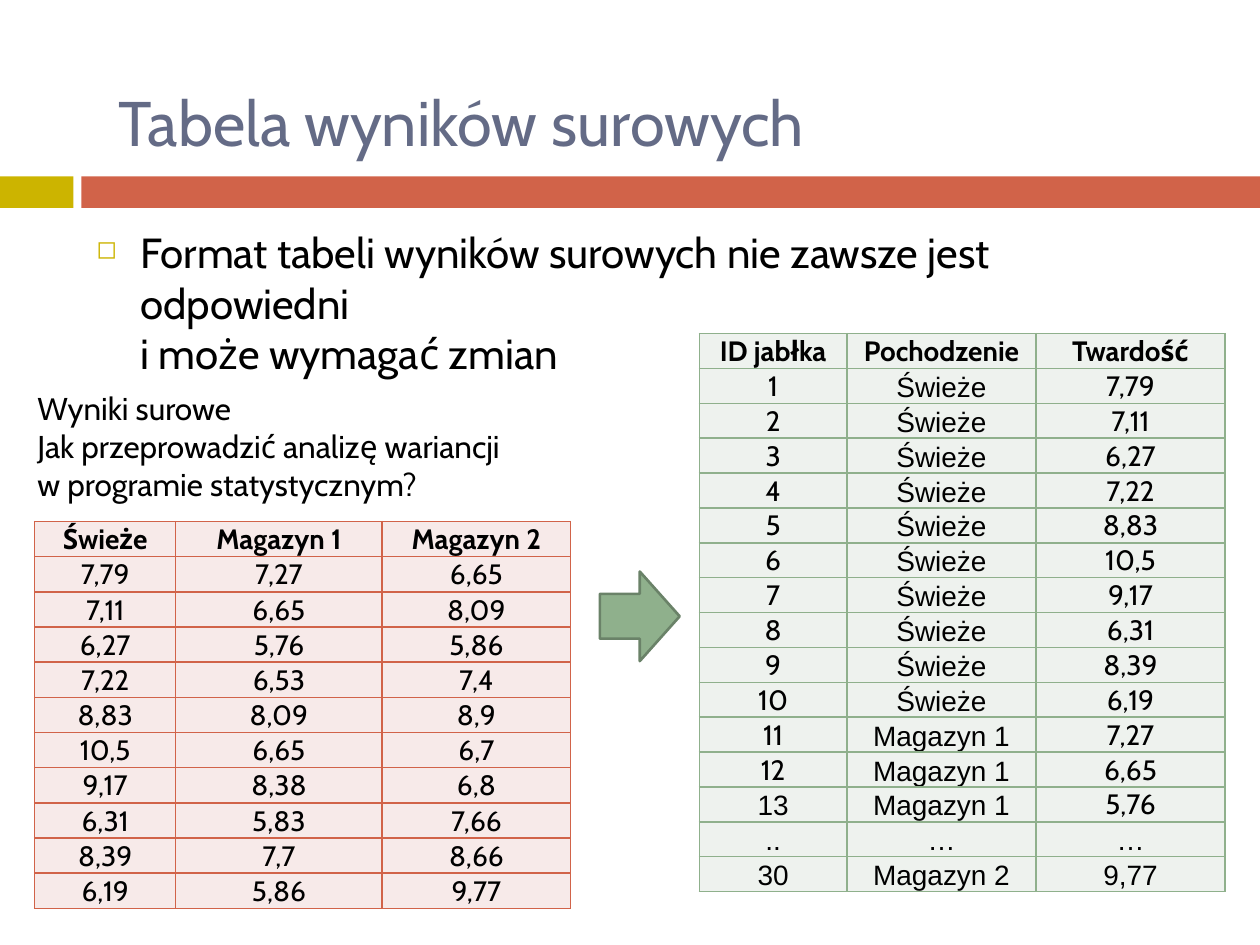
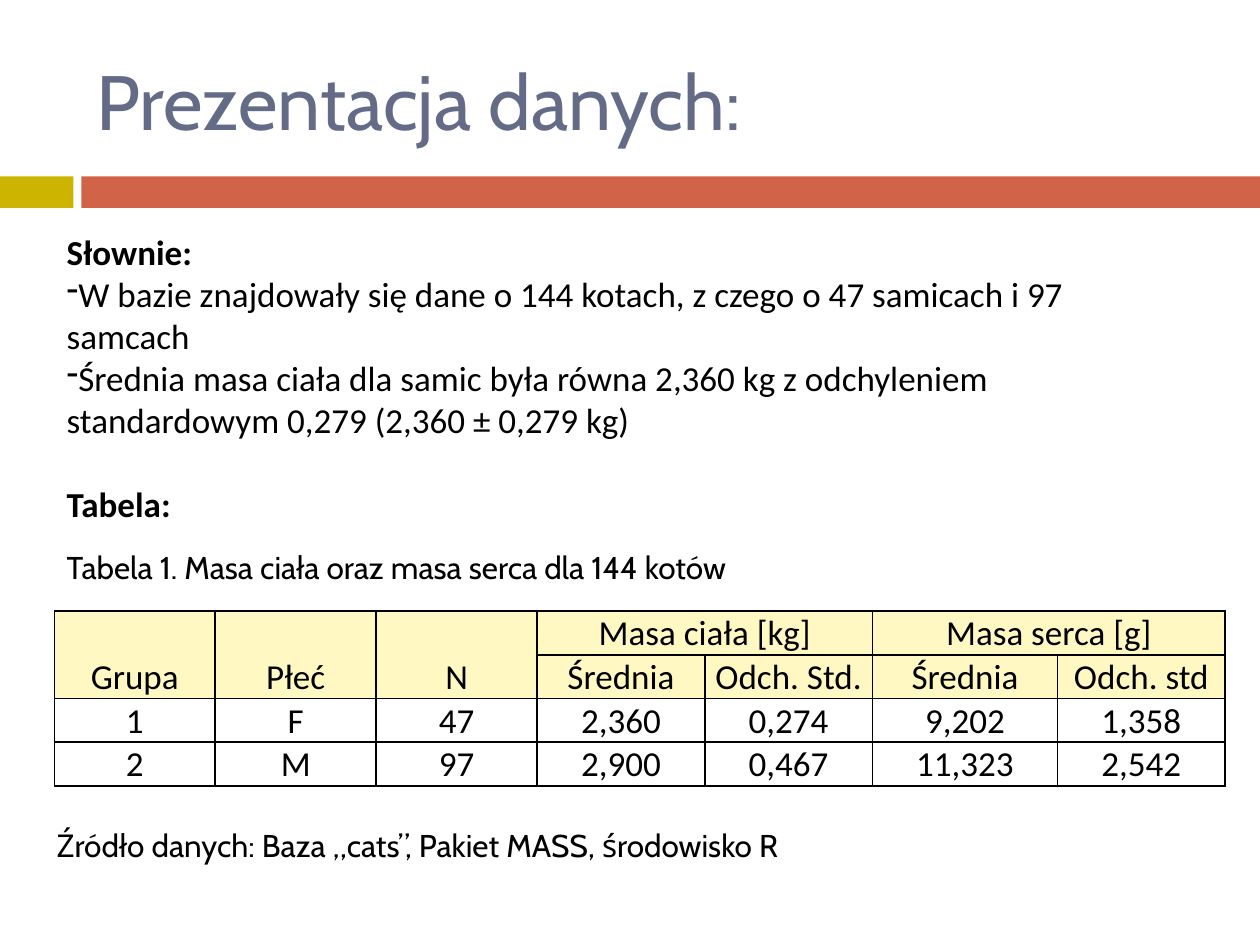
"""Builds two slides on raw result tables and on presenting data."""
from lxml.etree import SubElement as Sub
from pptx import Presentation
from pptx.dml.color import RGBColor as RGB
from pptx.enum.shapes import MSO_SHAPE as SHAPE
from pptx.enum.text import MSO_ANCHOR as ANCHOR, PP_ALIGN as ALIGN
from pptx.oxml.ns import qn
from pptx.util import Pt

COLORS = {
    "title": "646B86", "text": "000000", "gold": "CCB400", "red": "D16349",
    "green": "8FB08C", "dark_green": "6A8268", "pale_red": "F7EAE9",
    "pale_green": "EEF2EE", "pale_yellow": "FFF8C2",
}
C = {name: RGB.from_string(value) for name, value in COLORS.items()}


def add_text(s, box, lines, size, font="Cabin", color="text", anchor=ANCHOR.TOP):
    tf = s.shapes.add_textbox(*map(Pt, box)).text_frame
    tf.word_wrap = True
    tf.vertical_anchor = anchor
    for i, line in enumerate(lines):
        p = tf.paragraphs[0] if i == 0 else tf.add_paragraph()
        p.text = line
        for r in p.runs:
            r.font.size, r.font.name, r.font.color.rgb = Pt(size), font, C[color]
    return tf.paragraphs


def add_grid(s, left, top, widths, row_height, rows, size, font, border, fills):
    frame = s.shapes.add_table(len(rows), len(widths), Pt(left), Pt(top),
                               Pt(sum(widths)), Pt(row_height * len(rows)))
    tbl = frame.table
    tbl.first_row = tbl.horz_banding = False
    for col, width in zip(tbl.columns, widths):
        col.width = Pt(width)
    for i, row in enumerate(rows):
        for j, value in enumerate(row):
            cell = tbl.cell(i, j)
            cell.text = value
            cell.vertical_anchor = ANCHOR.BOTTOM
            cell.margin_left = cell.margin_right = cell.margin_top = Pt(0.7)
            cell.margin_bottom = 0
            p = cell.text_frame.paragraphs[0]
            p.alignment = ALIGN.CENTER
            for r in p.runs:
                r.font.size, r.font.name, r.font.color.rgb = Pt(size), font, C["text"]
                r.font.bold = False
            for side in ("lnL", "lnR", "lnT", "lnB"):
                ln = Sub(cell._tc.get_or_add_tcPr(), qn(f"a:{side}"), w=str(Pt(1)))
                Sub(Sub(ln, qn("a:solidFill")), qn("a:srgbClr"), val=COLORS[border])
            if fills[i]:
                cell.fill.solid()
                cell.fill.fore_color.rgb = C[fills[i]]
            else:
                cell.fill.background()
    return tbl


prs = Presentation()
prs.slide_width, prs.slide_height = Pt(720), Pt(540)

titles = [
    ("Tabela wyników surowych", (60.5, 30.25, 642, 78), 36),
    ("Prezentacja danych:", (48, 18, 642, 78), 44),
]
bands = [(0, 42, "gold"), (46.5, 673.5, "red")]
for title, box, size in titles:
    s = prs.slides.add_slide(prs.slide_layouts[6])
    for left, width, color in bands:
        sp = s.shapes.add_shape(SHAPE.RECTANGLE, Pt(left), Pt(100.8), Pt(width), Pt(18))
        sp.shadow.inherit = False
        sp.fill.solid()
        sp.fill.fore_color.rgb = C[color]
        sp.line.fill.background()
    add_text(s, box, [title], size, color="title", anchor=ANCHOR.MIDDLE)
raw_slide, report_slide = prs.slides

s = raw_slide
p = add_text(s, (48, 126, 642, 90), [
    "Format tabeli wyników surowych nie zawsze jest odpowiedni \vi może wymagać zmian"], 24)[0]
p.space_before = Pt(7)
pPr = p._p.get_or_add_pPr()
pPr.set("marL", str(Pt(25.2)))
pPr.set("indent", str(-Pt(25.2)))
Sub(Sub(pPr, qn("a:buClr")), qn("a:srgbClr"), val=COLORS["gold"])
Sub(pPr, qn("a:buSzPct"), val="60000")
Sub(pPr, qn("a:buChar"), char="◻")

add_text(s, (14.3, 219, 323, 73), [
    "Wyniki surowe", "Jak przeprowadzić analizę wariancji \vw programie statystycznym?"], 18)

origins = ["Świeże", "Magazyn 1", "Magazyn 2"]
hardness = [
    ["7,79", "7,27", "6,65"],
    ["7,11", "6,65", "8,09"],
    ["6,27", "5,76", "5,86"],
    ["7,22", "6,53", "7,4"],
    ["8,83", "8,09", "8,9"],
    ["10,5", "6,65", "6,7"],
    ["9,17", "8,38", "6,8"],
    ["6,31", "5,83", "7,66"],
    ["8,39", "7,7", "8,66"],
    ["6,19", "5,86", "9,77"],
]
wide_rows = [origins] + hardness
apples = [(origin, row[k]) for k, origin in enumerate(origins) for row in hardness]
long_rows = [["ID jabłka", "Pochodzenie", "Twardość"]]
long_rows += [[str(n), *apple] for n, apple in enumerate(apples[:13], 1)]
long_rows += [["..", "…", "…"], [str(len(apples)), *apples[-1]]]

wide = add_grid(s, 19.8, 298, [80.6, 118, 107.7], 20.1, wide_rows, 16, "Cabin",
                "red", ["pale_red"] * len(wide_rows))
long = add_grid(s, 399.6, 190.6, [84.4, 108, 108], 19.95, long_rows, 16, "Cabin",
                "green", ["pale_green"] * len(long_rows))
for tbl in (wide, long):
    for cell in tbl.rows[0].cells:
        cell.text_frame.paragraphs[0].runs[0].font.bold = True
for j, first_arial_row in enumerate([13, 1, 14]):
    for i in range(first_arial_row, len(long_rows)):
        long.cell(i, j).text_frame.paragraphs[0].runs[0].font.name = "Arial"

sp = s.shapes.add_shape(SHAPE.RIGHT_ARROW, Pt(342.8), Pt(326.6), Pt(45.6), Pt(51.2))
sp.shadow.inherit = False
sp.fill.solid()
sp.fill.fore_color.rgb = C["green"]
sp.line.color.rgb = C["dark_green"]
sp.line.width = Pt(1.5)

s = report_slide
cat_rows = [
    ["Grupa", "Płeć", "N", "Masa ciała [kg]", "", "Masa serca [g]", ""],
    ["", "", "", "Średnia", "Odch. Std.", "Średnia", "Odch. std"],
    ["1", "F", "47", "2,360", "0,274", "9,202", "1,358"],
    ["2", "M", "97", "2,900", "0,467", "11,323", "2,542"],
]
tbl = add_grid(s, 31, 349.2, [92, 92, 92, 95.8, 95.8, 105.8, 95.8], 25, cat_rows, 20,
               "Calibri", "text", ["pale_yellow", "pale_yellow", None, None])
for j in range(3):
    tbl.cell(0, j).merge(tbl.cell(1, j))
for j in (3, 5):
    tbl.cell(0, j).merge(tbl.cell(0, j + 1))

add_text(s, (31, 309.6, 567, 29), ["Tabela 1. Masa ciała oraz masa serca dla 144 kotów"], 18)
add_text(s, (25.2, 468.7, 567, 29), ["Źródło danych: Baza „cats”, Pakiet MASS, środowisko R"], 18)

ps = add_text(s, (31, 128.2, 652, 177), [
    "Słownie:",
    "W bazie znajdowały się dane o 144 kotach, z czego o 47 samicach i 97 samcach",
    "Średnia masa ciała dla samic była równa 2,360 kg z odchyleniem standardowym "
    "0,279 (2,360 ± 0,279 kg)",
    "Tabela:",
], 20, "Calibri")
for p in (ps[0], ps[3]):
    p.runs[0].font.bold = True
for p in ps[1:3]:
    Sub(p._p.get_or_add_pPr(), qn("a:buChar"), char="-")
ps[3].space_before = Pt(24)

prs.save("out.pptx")
